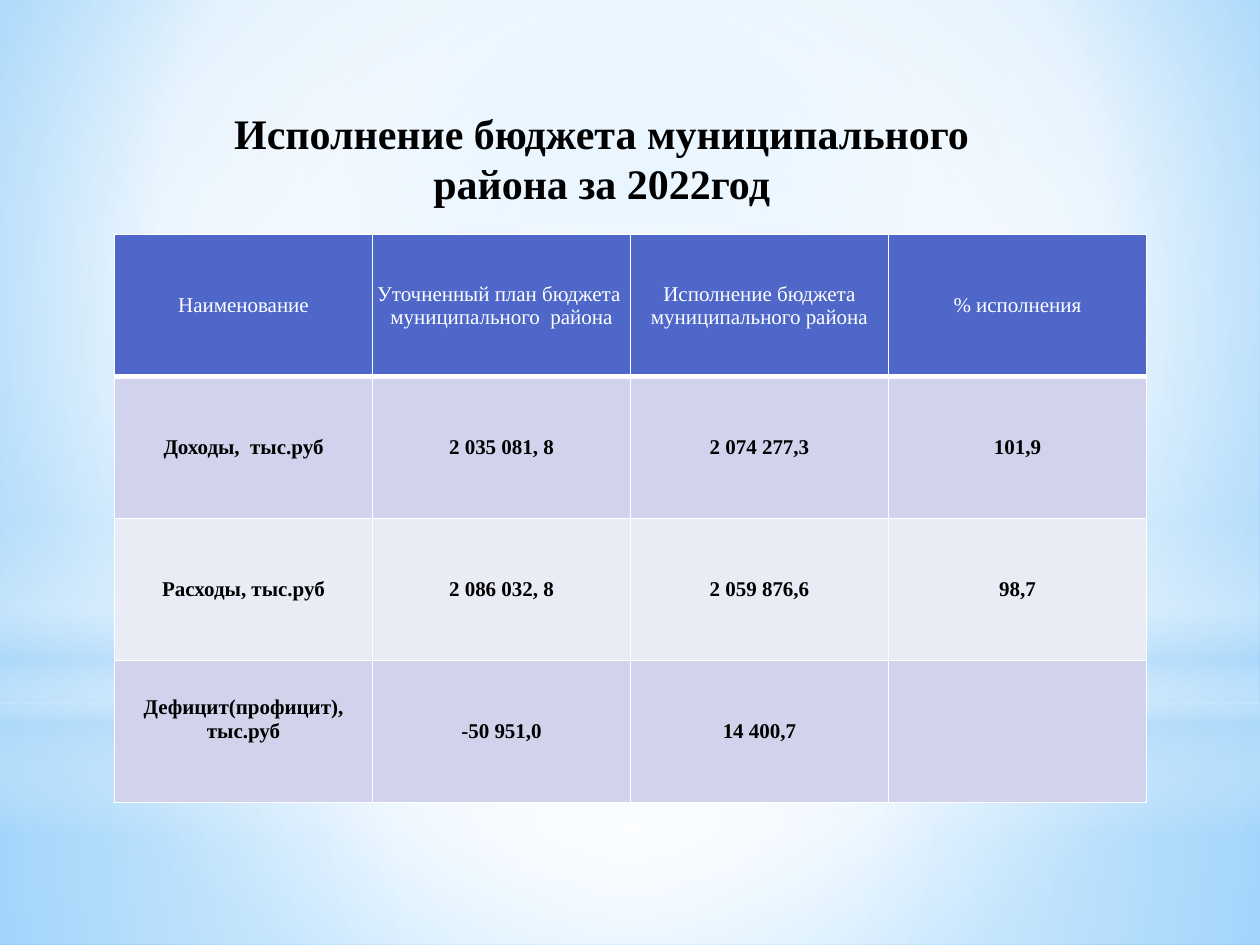
from lxml.etree import SubElement
from pptx import Presentation
from pptx.dml.color import RGBColor
from pptx.enum.shapes import MSO_SHAPE as Shape
from pptx.enum.text import MSO_ANCHOR as Anchor, PP_ALIGN as Align
from pptx.oxml.ns import qn
from pptx.util import Inches, Pt

COLORS = {
    "white": "FFFFFF",
    "black": "000000",
    "sky": "9ED5FF",
    "azure": "5BB9FF",
    "mist": "B4DCFA",
    "header": "4E67C8",
    "odd": "D0D3EB",
    "even": "E9EBF5",
}
FONT = "Times New Roman"
CENTER = (50, 50, 50, 50)
ROWS = [
    ["Наименование", "Уточненный план бюджета  муниципального  района",
     "Исполнение бюджета муниципального района", "% исполнения"],
    ["Доходы,  тыс.руб", "2 035 081, 8", "2 074 277,3", "101,9"],
    ["Расходы, тыс.руб", "2 086 032, 8", "2 059 876,6", "98,7"],
    ["Дефицит(профицит), тыс.руб", "-50 951,0", "14 400,7", ""],
]


def write_text(frame, text, size=12, color="black", bold=False, before=0, after=0):
    frame.word_wrap = True
    paragraph = frame.paragraphs[0]
    paragraph.alignment = Align.CENTER
    paragraph.space_before = Pt(before)
    paragraph.space_after = Pt(after)
    run = paragraph.add_run()
    run.text = text
    run.font.name = FONT
    run.font.size = Pt(size)
    run.font.bold = bold
    run.font.color.rgb = RGBColor.from_string(COLORS[color])
    return paragraph


def paint_gradient(fill, element, stops, focus=None, angle=0):
    fill.gradient()
    gradient = next(element.iter(qn("a:gradFill")))
    for child in list(gradient):
        gradient.remove(child)
    stop_list = SubElement(gradient, qn("a:gsLst"))
    for position, color, opacity in stops:
        stop = SubElement(stop_list, qn("a:gs"), pos=str(position * 1000))
        tint = SubElement(stop, qn("a:srgbClr"), val=COLORS[color])
        if opacity < 100:
            SubElement(tint, qn("a:alpha"), val=str(opacity * 1000))
    if focus:
        radial = SubElement(gradient, qn("a:path"), path="circle")
        sides = {side: str(share * 1000) for side, share in zip("ltrb", focus)}
        SubElement(radial, qn("a:fillToRect"), **sides)
    else:
        SubElement(gradient, qn("a:lin"), ang=str(angle * 60000), scaled="0")


def add_glow(slide, kind, top, height, stops, **direction):
    shape = slide.shapes.add_shape(kind, 0, Inches(top), Inches(10), Inches(height))
    shape.shadow.inherit = False
    shape.line.fill.background()
    paint_gradient(shape.fill, shape.element, stops, **direction)


def add_backdrop(slide):
    paint_gradient(slide.background.fill, slide.element,
                   [(0, "sky", 100), (60, "white", 100), (100, "azure", 100)],
                   focus=(20, 10, 20, 60))
    add_glow(slide, Shape.RECTANGLE, 5.58, 1.92,
             [(0, "white", 91), (37, "white", 76), (100, "mist", 79)], focus=CENTER)
    add_glow(slide, Shape.RECTANGLE, 0, 5.58,
             [(0, "white", 89), (48, "white", 62), (100, "mist", 79)], focus=CENTER)
    add_glow(slide, Shape.RECTANGLE, 4.12, 2.5,
             [(0, "white", 0), (29, "white", 30), (45, "mist", 40),
              (55, "white", 26), (65, "mist", 60), (100, "white", 0)], angle=90)
    add_glow(slide, Shape.OVAL, 1.75, 5.58,
             [(0, "white", 100), (56, "white", 0)], focus=CENTER)


def add_title(slide, left, top, width, height):
    box = slide.shapes.add_textbox(Inches(left), Inches(top), Inches(width), Inches(height))
    paragraph = write_text(box.text_frame, "Исполнение бюджета муниципального района за 2022год",
                           size=24, bold=True, before=4.8, after=3)
    properties = paragraph._p.get_or_add_pPr()
    properties.set("marL", str(Inches(0.05)))
    properties.set("indent", "0")


def add_borders(cell, bottom=1):
    properties = cell._tc.get_or_add_tcPr()
    for side, width in zip("LRTB", (1, 1, 1, bottom)):
        line = SubElement(properties, qn(f"a:ln{side}"), w=str(Pt(width)))
        fill = SubElement(line, qn("a:solidFill"))
        SubElement(fill, qn("a:srgbClr"), val=COLORS["white"])


def add_budget_table(slide, left, top, width, height):
    table = slide.shapes.add_table(len(ROWS), len(ROWS[0]), Inches(left), Inches(top),
                                   Inches(width), Inches(height)).table
    for row, texts in enumerate(ROWS):
        is_header = row == 0
        band = "header" if is_header else "odd" if row % 2 else "even"
        for column, text in enumerate(texts):
            cell = table.cell(row, column)
            add_borders(cell, bottom=3 if is_header else 1)
            cell.fill.solid()
            cell.fill.fore_color.rgb = RGBColor.from_string(COLORS[band])
            cell.vertical_anchor = Anchor.MIDDLE
            if is_header and column in (1, 2):
                cell.margin_left = cell.margin_right = cell.margin_top = Inches(0.01)
                cell.margin_bottom = 0
            if text:
                write_text(cell.text_frame, text, bold=not is_header,
                           color="white" if is_header else "black")
    table.cell(len(ROWS) - 1, 0).margin_bottom = Inches(0.24)


def main():
    presentation = Presentation()
    presentation.slide_width = Inches(10)
    presentation.slide_height = Inches(7.5)
    slide = presentation.slides.add_slide(presentation.slide_layouts[6])
    add_backdrop(slide)
    add_title(slide, 1.25, 0.8, 7, 5.31)
    add_budget_table(slide, 0.91, 1.86, 8.19, 4.51)
    presentation.save("out.pptx")


if __name__ == "__main__":
    main()
